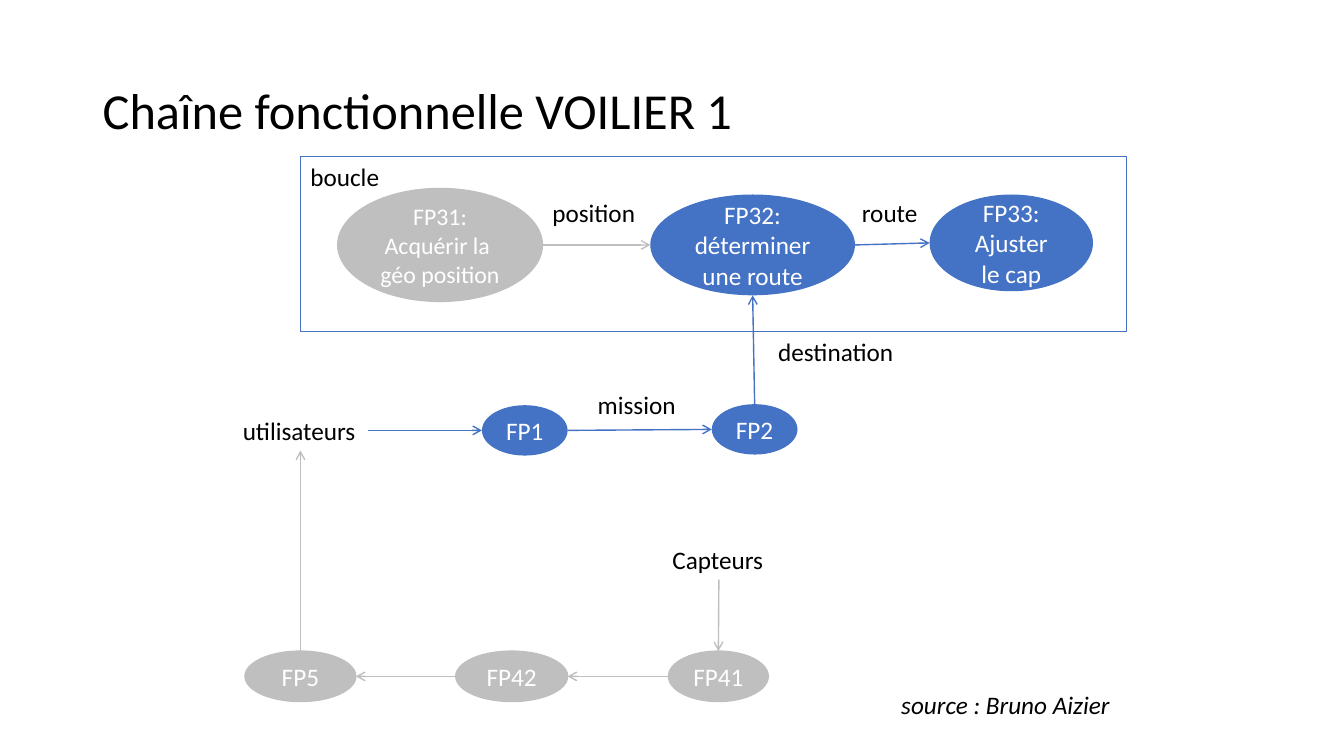
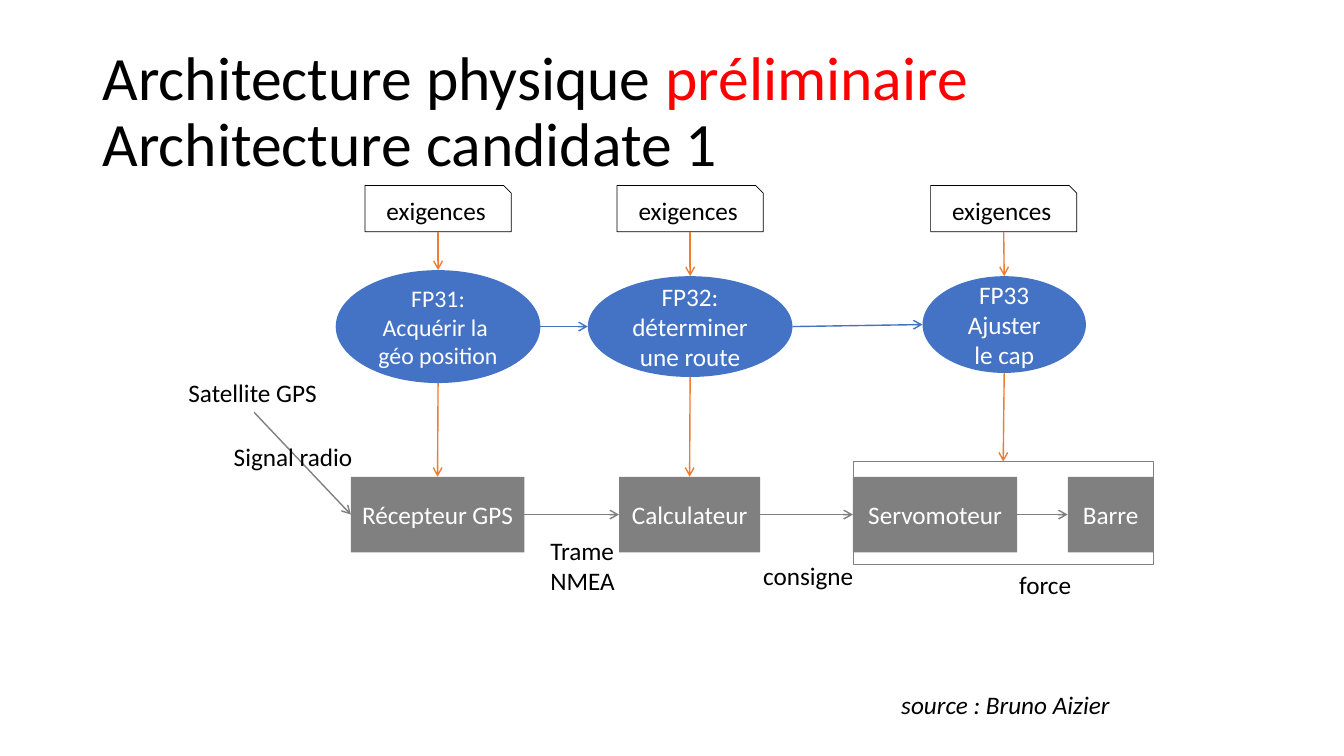
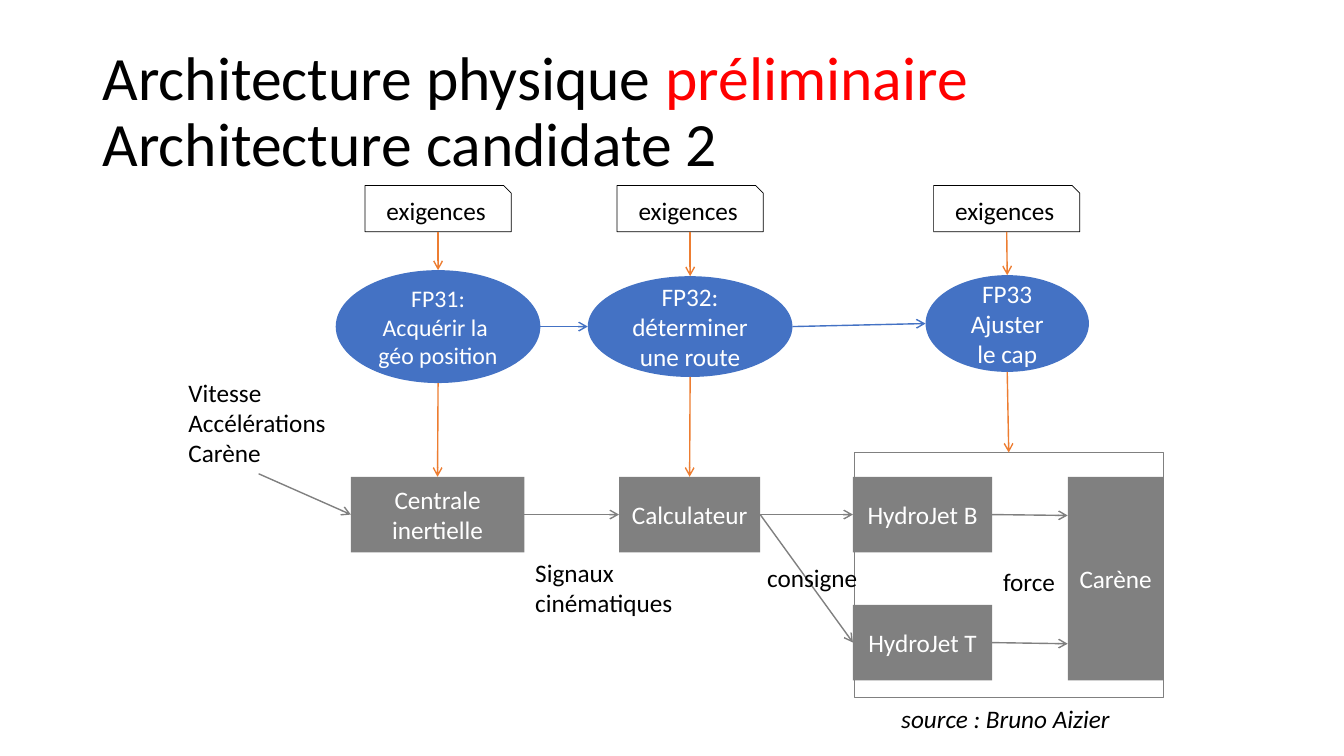
from lxml import etree
from pptx import Presentation
from pptx.dml.color import RGBColor
from pptx.enum import shapes, text
from pptx.oxml import ns
from pptx.util import Inches, Pt

BLUE = RGBColor(0x44, 0x72, 0xC4)
PALE = RGBColor(0xBF, 0xBF, 0xBF)
GREY = RGBColor(0x80, 0x80, 0x80)
ORANGE = RGBColor(0xED, 0x7D, 0x31)
RED = RGBColor(0xFF, 0, 0)
BLACK = RGBColor(0, 0, 0)
WHITE = RGBColor(0xFF, 0xFF, 0xFF)
FONT = "Calibri"

OVAL = shapes.MSO_SHAPE.OVAL
RECT = shapes.MSO_SHAPE.RECTANGLE
CARD = shapes.MSO_SHAPE.SNIP_1_RECTANGLE
LABEL = None

# Points on a box, as fractions of its width and height
TOP, BOTTOM, LEFT, RIGHT = (0.5, 0), (0.5, 1), (0, 0.5), (1, 0.5)


def add_box(page, kind, place, words="", fill=None, line=None, line_width=0.5, size=18, italic=False):
    """Add a shape, or a plain label when kind is LABEL; each line of words is a paragraph."""
    lengths = [Inches(value) for value in place]
    if kind is LABEL:
        box = page.shapes.add_textbox(*lengths)
        box.text_frame.auto_size = text.MSO_AUTO_SIZE.SHAPE_TO_FIT_TEXT
    else:
        box = page.shapes.add_shape(kind, *lengths)
        box.shadow.inherit = False
        box.text_frame.vertical_anchor = text.MSO_ANCHOR.MIDDLE
        if fill is None:
            box.fill.background()
        else:
            box.fill.solid()
            box.fill.fore_color.rgb = fill
        if line is None:
            box.line.fill.background()
        else:
            box.line.color.rgb = line
            box.line.width = Pt(line_width)
    frame = box.text_frame
    frame.word_wrap = kind == OVAL and " " in words
    for number, sentence in enumerate(words.split("\n") if words else []):
        para = frame.add_paragraph() if number else frame.paragraphs[0]
        para.alignment = text.PP_ALIGN.LEFT if kind is LABEL else text.PP_ALIGN.CENTER
        span = para.add_run()
        span.text = sentence
        span.font.name, span.font.size = FONT, Pt(size)
        span.font.color.rgb = BLACK if fill is None else WHITE
        if italic:
            span.font.italic = True
    return box


def add_arrow(page, colour, start, start_point, end, end_point):
    """Draw an arrow between a point on one box and a point on another."""
    ends = []
    for box, (across, down) in ((start, start_point), (end, end_point)):
        ends += [int(box.left + across * box.width), int(box.top + down * box.height)]
    arrow = page.shapes.add_connector(shapes.MSO_CONNECTOR.STRAIGHT, *ends)
    arrow.line.color.rgb = colour
    arrow.line.width = Pt(1)
    etree.SubElement(arrow.line._get_or_add_ln(), ns.qn("a:tailEnd"), type="arrow")
    etree.SubElement(arrow._element.spPr, ns.qn("a:effectLst"))


deck = Presentation()
deck.slide_width, deck.slide_height = Inches(13.33), Inches(7.5)

# Titles and source lines: size, lines of (words, colour), top of the source line
candidate_heading = [("Architecture physique ", BLACK), ("préliminaire", RED)]
headings = [
    (36, [[("Chaîne fonctionnelle VOILIER 1", BLACK)]], 6.79),
    (44, [candidate_heading, [("Architecture candidate 1", BLACK)]], 6.79),
    (44, [candidate_heading, [("Architecture candidate 2", BLACK)]], 6.93),
]
pages = []
for size, lines, source_top in headings:
    page = deck.slides.add_slide(deck.slide_layouts[6])
    pages.append(page)
    title = page.shapes.add_textbox(Inches(0.92), Inches(0.4), Inches(11.5), Inches(1.45))
    title.text_frame.word_wrap = True
    title.text_frame.vertical_anchor = text.MSO_ANCHOR.MIDDLE
    para = title.text_frame.paragraphs[0]
    para.line_spacing = 0.9
    for number, line in enumerate(lines):
        if number:
            para.add_line_break()
        for words, colour in line:
            span = para.add_run()
            span.text = words
            span.font.name, span.font.size = FONT, Pt(size)
            span.font.color.rgb = colour
    add_box(page, LABEL, (8.84, source_top, 2.35, 0.4), "source : Bruno Aizier", italic=True)

# Slide 1: functional chain
chain = pages[0]
locate_words = "FP31: Acquérir la \ngéo position"
route_words = "FP32: déterminer une route"

fp1 = add_box(chain, OVAL, (4.78, 4.02, 0.85, 0.5), "FP1", BLUE)
fp2 = add_box(chain, OVAL, (7.06, 4.01, 0.85, 0.5), "FP2", BLUE)
locate = add_box(chain, OVAL, (3.35, 1.87, 2.03, 1.12), locate_words, PALE, PALE, 1, size=17)
route = add_box(chain, OVAL, (6.45, 1.93, 2.03, 1), route_words, BLUE)
steer = add_box(chain, OVAL, (9.22, 1.93, 1.62, 0.96), "FP33:\nAjuster le cap", BLUE)
fp41, fp42, fp5 = [
    add_box(chain, OVAL, (left, 6.46, width, 0.5), words, PALE, PALE, 1)
    for left, width, words in ((6.63, 0.99, "FP41"), (4.52, 1.11, "FP42"), (2.43, 1.1, "FP5"))
]
sensors = add_box(chain, LABEL, (6.57, 5.35, 1.12, 0.4), "Capteurs")
users = add_box(chain, LABEL, (2.31, 4.07, 1.34, 0.4), "utilisateurs")
for left, top, width, words in (
    (5.83, 3.81, 0.98, "mission"),
    (7.62, 3.29, 1.36, "destination"),
    (8.45, 1.91, 0.77, "route"),
    (5.38, 1.91, 1.03, "position"),
):
    add_box(chain, LABEL, (left, top, width, 0.4), words)

for colour, *ends in (
    (BLUE, users, RIGHT, fp1, LEFT),
    (BLUE, fp1, RIGHT, fp2, LEFT),
    (BLUE, fp2, TOP, route, BOTTOM),
    (BLUE, route, RIGHT, steer, LEFT),
    (PALE, locate, RIGHT, route, LEFT),
    (PALE, sensors, BOTTOM, fp41, TOP),
    (PALE, fp41, LEFT, fp42, RIGHT),
    (PALE, fp42, LEFT, fp5, RIGHT),
    (PALE, fp5, TOP, users, BOTTOM),
):
    add_arrow(chain, colour, *ends)

loop_frame = add_box(chain, RECT, (2.98, 1.55, 8.19, 1.74), "boucle", line=BLUE)
loop_frame.text_frame.vertical_anchor = text.MSO_ANCHOR.TOP
loop_frame.text_frame.paragraphs[0].alignment = text.PP_ALIGN.LEFT

# Slides 2 and 3: two candidate architectures on the same skeleton
candidates = [
    {
        "frame": (8.46, 4.58, 2.98, 1.02),
        "steer": (9.15, 2.74),
        "sensor": "Récepteur GPS",
        "input": ((1.77, 3.69, 1.5, 0.4), "Satellite GPS"),
        "actuators": [(4.73, 1.63, "Servomoteur", LEFT)],
        "driven": ((10.59, 4.73, 0.85, 0.75), "Barre"),
        "labels": [
            ((2.22, 4.33, 1.4, 0.4), "Signal radio"),
            ((5.36, 5.26, 0.9, 0.71), "Trame\nNMEA"),
            ((7.47, 5.51, 1.11, 0.4), "consigne"),
            ((10.01, 5.6, 0.73, 0.4), "force"),
        ],
    },
    {
        "frame": (8.47, 4.49, 3.07, 2.43),
        "steer": (9.18, 2.73),
        "sensor": "Centrale\ninertielle",
        "input": ((1.77, 3.69, 1.59, 1.01), "Vitesse\nAccélérations\nCarène"),
        "actuators": [(4.73, 1.38, "HydroJet B", (0, 0.19)), (6, 1.38, "HydroJet T", (0, 0.82))],
        "driven": ((10.59, 4.73, 0.95, 2.02), "Carène"),
        "labels": [
            ((5.21, 5.48, 1.58, 0.71), "Signaux\ncinématiques"),
            ((7.51, 5.53, 1.11, 0.4), "consigne"),
            ((9.85, 5.57, 0.73, 0.4), "force"),
        ],
    },
]
for page, candidate in zip(pages[1:], candidates):
    frame = add_box(page, RECT, candidate["frame"], line=GREY)
    locate = add_box(page, OVAL, (3.33, 2.68, 2.03, 1.12), locate_words, BLUE, size=17)
    route = add_box(page, OVAL, (5.83, 2.74, 2.03, 1), route_words, BLUE)
    steer = add_box(page, OVAL, (*candidate["steer"], 1.62, 0.96), "FP33\nAjuster le cap", BLUE)
    sensor = add_box(page, RECT, (3.48, 4.73, 1.72, 0.75), candidate["sensor"], GREY)
    computer = add_box(page, RECT, (6.14, 4.73, 1.4, 0.75), "Calculateur", GREY)
    source = add_box(page, LABEL, *candidate["input"])
    driven = add_box(page, RECT, *candidate["driven"], GREY)

    add_arrow(page, BLUE, locate, RIGHT, route, LEFT)
    add_arrow(page, BLUE, route, RIGHT, steer, LEFT)
    add_arrow(page, GREY, source, BOTTOM, sensor, LEFT)
    add_arrow(page, GREY, sensor, RIGHT, computer, LEFT)
    for top, width, words, driven_point in candidate["actuators"]:
        actuator = add_box(page, RECT, (8.46, top, width, 0.75), words, GREY)
        add_arrow(page, GREY, computer, RIGHT, actuator, LEFT)
        add_arrow(page, GREY, actuator, RIGHT, driven, driven_point)

    for function, part, card_left in (
        (locate, sensor, 3.62),
        (route, computer, 6.12),
        (steer, frame, candidate["steer"][0] + 0.08),
    ):
        card = add_box(page, CARD, (card_left, 1.84, 1.45, 0.46), "exigences", line=BLACK)
        add_arrow(page, ORANGE, card, BOTTOM, function, TOP)
        add_arrow(page, ORANGE, function, BOTTOM, part, TOP)
    for place, words in candidate["labels"]:
        add_box(page, LABEL, place, words)

deck.save("out.pptx")
